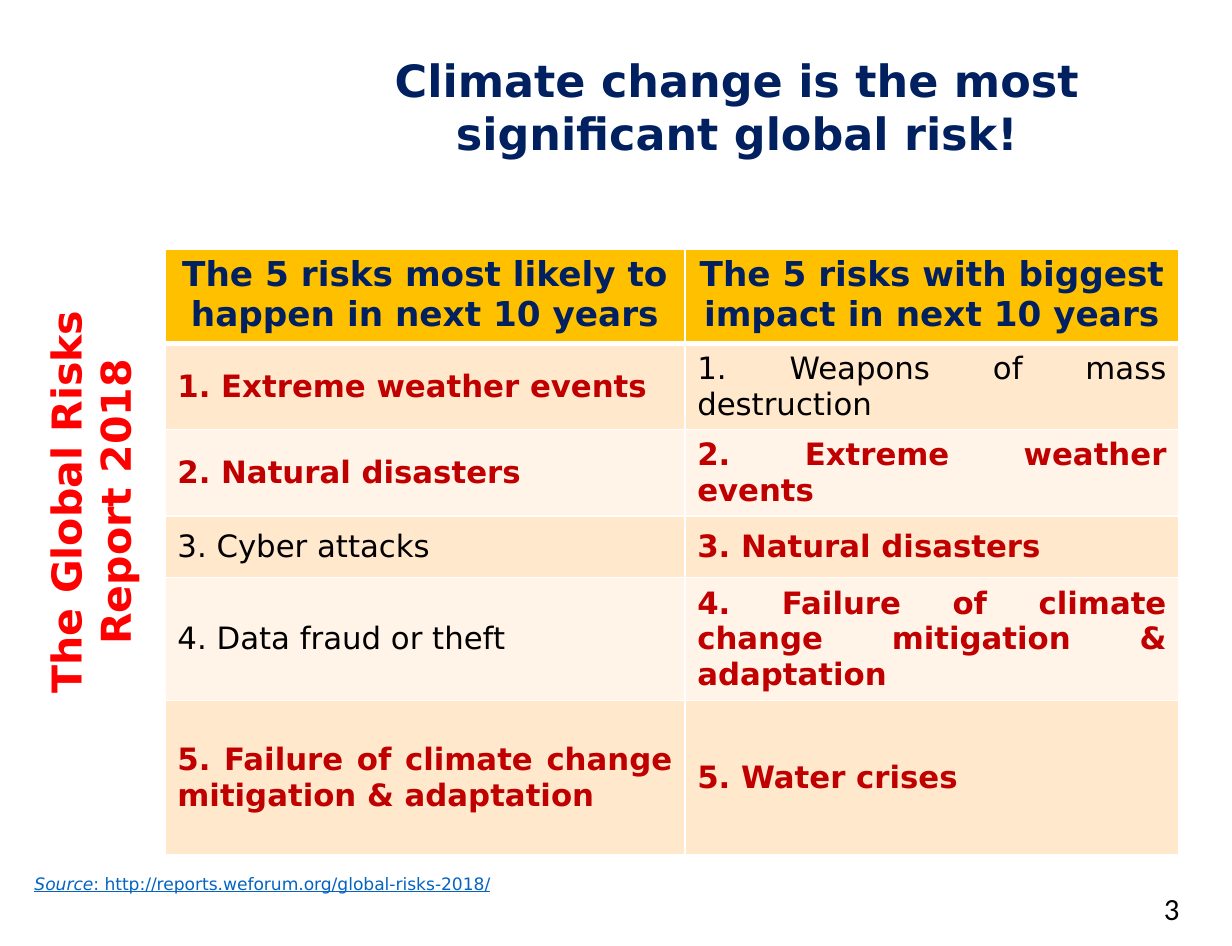
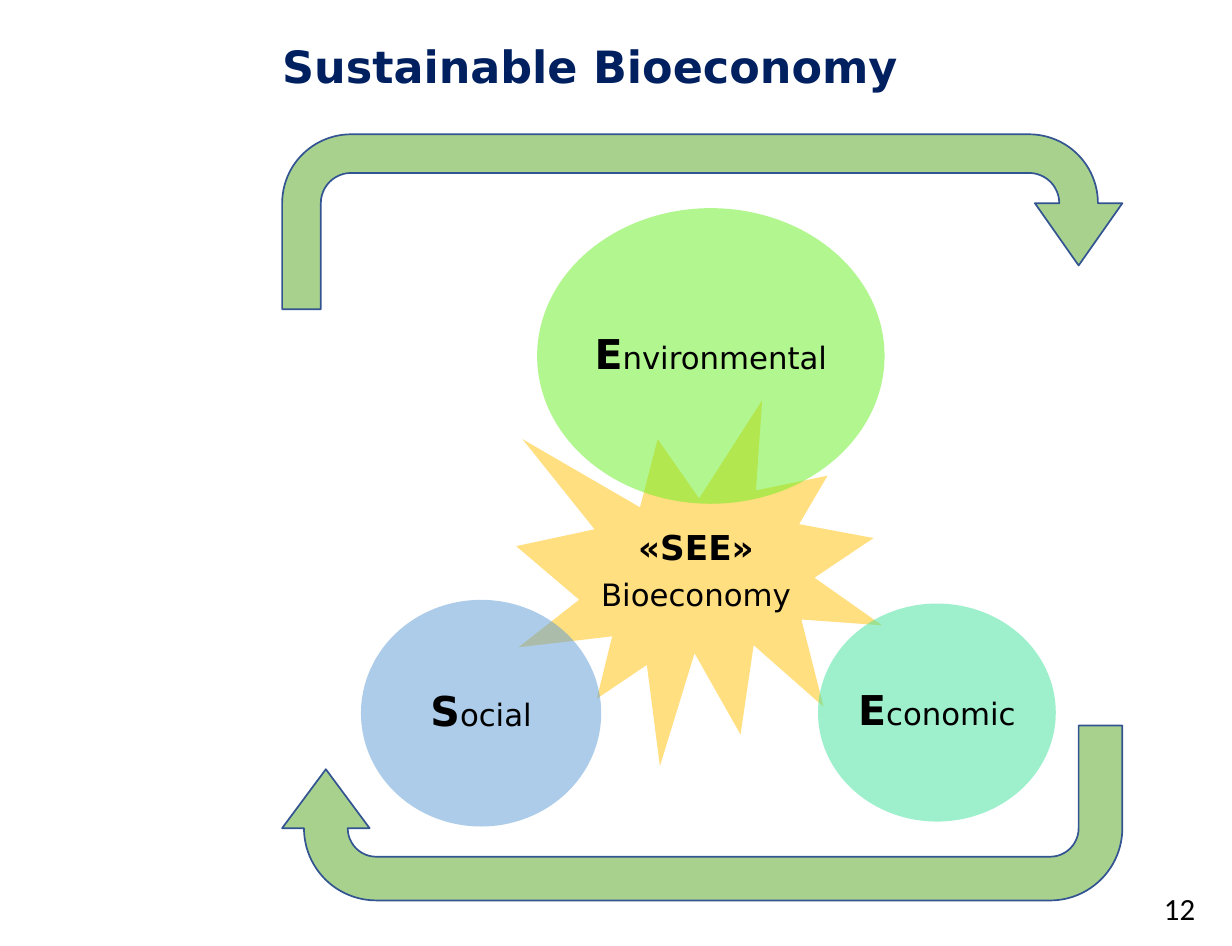
from lxml import etree
from pptx import Presentation
from pptx.dml.color import RGBColor
from pptx.enum.shapes import MSO_SHAPE
from pptx.enum.text import MSO_ANCHOR, PP_ALIGN
from pptx.oxml.ns import qn
from pptx.util import Inches, Pt

NAVY = RGBColor(0x00, 0x20, 0x60)
BLACK = RGBColor(0x00, 0x00, 0x00)
RED = RGBColor(0xFF, 0x00, 0x00)
DARK_RED = RGBColor(0xC0, 0x00, 0x00)
LINK_BLUE = RGBColor(0x05, 0x63, 0xC1)
GOLD = RGBColor(0xFF, 0xC0, 0x00)
PEACH = RGBColor(0xFF, 0xE8, 0xCC)
CREAM = RGBColor(0xFF, 0xF4, 0xE7)
WHITE = RGBColor(0xFF, 0xFF, 0xFF)
LIME = RGBColor(0x67, 0xEF, 0x21)
MINT = RGBColor(0x3F, 0xE1, 0x9B)
SKY = RGBColor(0x5B, 0x9B, 0xD5)
ARROW_GREEN = RGBColor(0xA9, 0xD1, 0x8E)
ARROW_EDGE = RGBColor(0x32, 0x54, 0x91)

FONT = "DejaVu Sans"
HEADERS = ["The 5 risks most likely to happen in next 10 years",
           "The 5 risks with biggest impact in next 10 years"]
# Each risk is a text and whether it is highlighted
RISKS = [
    [("Extreme weather events", True), ("Weapons of mass destruction", False)],
    [("Natural disasters", True), ("Extreme weather events", True)],
    [("Cyber attacks", False), ("Natural disasters", True)],
    [("Data fraud or theft", False),
     ("Failure of climate change mitigation & adaptation", True)],
    [("Failure of climate change mitigation & adaptation", True),
     ("Water crises", True)],
]


# Shared helpers
def style_run(r, size, color=BLACK, bold=False, font=FONT):
    r.font.name = font
    r.font.size = Pt(size)
    r.font.bold = bold
    r.font.color.rgb = color


def add_text(s, box, text="", inset=(0, 0), wrap=True):
    tf = s.shapes.add_textbox(*map(Inches, box)).text_frame
    tf.word_wrap = wrap
    tf.margin_left = tf.margin_right = Inches(inset[0])
    tf.margin_top = tf.margin_bottom = Inches(inset[1])
    tf.text = text
    return tf


def add_filled(s, kind, box, color, opacity=None):
    sp = s.shapes.add_shape(kind, *map(Inches, box))
    sp.shadow.inherit = False
    sp.fill.solid()
    sp.fill.fore_color.rgb = color
    sp.line.fill.background()
    if opacity:
        clr = sp.fill._xPr.find(".//" + qn("a:srgbClr"))
        etree.SubElement(clr, qn("a:alpha"), val=str(opacity * 1000))
    return sp


def new_slide(prs, title, title_box, align, number):
    s = prs.slides.add_slide(prs.slide_layouts[6])
    p = add_text(s, title_box, title).paragraphs[0]
    p.alignment = align
    style_run(p.runs[0], 26, NAVY, True)
    # Page number
    tf = add_text(s, (9.35, 7.17, 0.5, 0.42), number, (0.1, 0.05), False)
    style_run(tf.paragraphs[0].runs[0], 18, font="Calibri")
    return s


# Risk table
def fill_cell(cell, text, size, color, bold, align, fill, bottom=1):
    tcPr = cell._tc.get_or_add_tcPr()
    for side, width in (("L", 1), ("R", 1), ("T", 1), ("B", bottom)):
        ln = etree.SubElement(tcPr, qn("a:ln" + side), w=str(Pt(width)))
        solid = etree.SubElement(ln, qn("a:solidFill"))
        etree.SubElement(solid, qn("a:srgbClr"), val=str(WHITE))
    cell.fill.solid()
    cell.fill.fore_color.rgb = fill
    cell.text_frame.text = text
    p = cell.text_frame.paragraphs[0]
    p.alignment = align
    style_run(p.runs[0], size, color, bold)


def add_risk_table(s, box):
    table = s.shapes.add_table(len(RISKS) + 1, 2, *map(Inches, box)).table
    for col, width in zip(table.columns, (4.22, 4.01)):
        col.width = Inches(width)
    for row, height in zip(table.rows, (0.5, 0.5, 0.5, 0.5, 0.88, 1.25)):
        row.height = Inches(height)
    for c, text in enumerate(HEADERS):
        fill_cell(table.cell(0, c), text, 20, NAVY, True, PP_ALIGN.CENTER,
                  GOLD, bottom=3)
    for n, pair in enumerate(RISKS, start=1):
        for c, (risk, key) in enumerate(pair):
            cell = table.cell(n, c)
            fill_cell(cell, f"{n}. {risk}", 18, DARK_RED if key else BLACK,
                      key, PP_ALIGN.JUSTIFY, PEACH if n % 2 else CREAM)
            cell.vertical_anchor = MSO_ANCHOR.MIDDLE


def add_report_name(s, box):
    tf = add_text(s, box, "The Global Risks Report 2018", (0.1, 0.05))
    tf._parent.rotation = 270
    p = tf.paragraphs[0]
    p.alignment = PP_ALIGN.CENTER
    style_run(p.runs[0], 24, RED, True)


def add_source(s, box):
    p = add_text(s, box).paragraphs[0]
    p.space_after = Pt(14.2)
    for text, italic in (("Source", True),
                         (": http://reports.weforum.org/global-risks-2018/", False)):
        r = p.add_run()
        r.text = text
        style_run(r, 10, LINK_BLUE)
        r.font.italic = italic
        r.font.underline = True


def risk_slide(prs):
    s = new_slide(prs, "Climate change is the most significant global risk!",
                  (2.47, 0.43, 7.03, 1.16), PP_ALIGN.CENTER, "3")
    add_source(s, (0.28, 7.09, 4.72, 0.17))
    add_risk_table(s, (1.34, 2.02, 8.23, 4.13))
    add_report_name(s, (-1.49, 3.62, 4.45, 0.91))


# Bioeconomy diagram
def add_label(s, box, lines):
    """Each line is a list of (text, size, bold) runs."""
    tf = add_text(s, box, inset=(0.03, 0.03))
    tf.vertical_anchor = MSO_ANCHOR.MIDDLE
    for i, line in enumerate(lines):
        p = tf.add_paragraph() if i else tf.paragraphs[0]
        p.alignment = PP_ALIGN.CENTER
        p.line_spacing = 0.9
        p.space_after = Pt(round(0.35 * line[0][1], 1))
        for text, size, bold in line:
            r = p.add_run()
            r.text = text
            style_run(r, size, bold=bold)


def add_pillar(s, box, word, color):
    add_filled(s, MSO_SHAPE.OVAL, box, color, opacity=50)
    # The label fills the rectangle inscribed in the ellipse
    left, top, width, height = box
    inner = (left + 0.146 * width, top + 0.146 * height,
             0.708 * width, 0.708 * height)
    add_label(s, inner, [[(word[0], 24, True), (word[1:], 18, False)]])


def add_cycle_arrow(s, box, thickness, head, rotation=0):
    sp = add_filled(s, MSO_SHAPE.U_TURN_ARROW, box, ARROW_GREEN)
    sp.line.color.rgb = ARROW_EDGE
    sp.line.width = Pt(1)
    sp.rotation = rotation
    for i, value in enumerate((thickness, 0.25, head, 0.438, 0.75)):
        sp.adjustments[i] = value


def bioeconomy_slide(prs):
    s = new_slide(prs, "Sustainable Bioeconomy", (2.29, 0.32, 6.67, 0.64),
                  PP_ALIGN.LEFT, "12")
    # Central burst
    add_filled(s, MSO_SHAPE.EXPLOSION1, (4.19, 3.25, 2.97, 2.97), GOLD, opacity=50)
    add_label(s, (4.82, 4.12, 1.66, 1.05),
              [[("«SEE»", 20, True)], [("Bioeconomy", 18, False)]])
    # Three pillars
    add_pillar(s, (4.36, 1.69, 2.82, 2.4), "Environmental", LIME)
    add_pillar(s, (6.64, 4.9, 1.93, 1.77), "Economic", MINT)
    add_pillar(s, (2.93, 4.87, 1.95, 1.84), "Social", SKY)
    # Cycle arrows
    add_cycle_arrow(s, (2.29, 1.09, 6.82, 1.42), 0.221, 0.356)
    add_cycle_arrow(s, (2.29, 5.89, 6.82, 1.42), 0.25, 0.337, rotation=180)


def main():
    prs = Presentation()
    prs.slide_width = Inches(10)
    prs.slide_height = Inches(7.68)
    risk_slide(prs)
    bioeconomy_slide(prs)
    prs.save("out.pptx")


if __name__ == "__main__":
    main()
